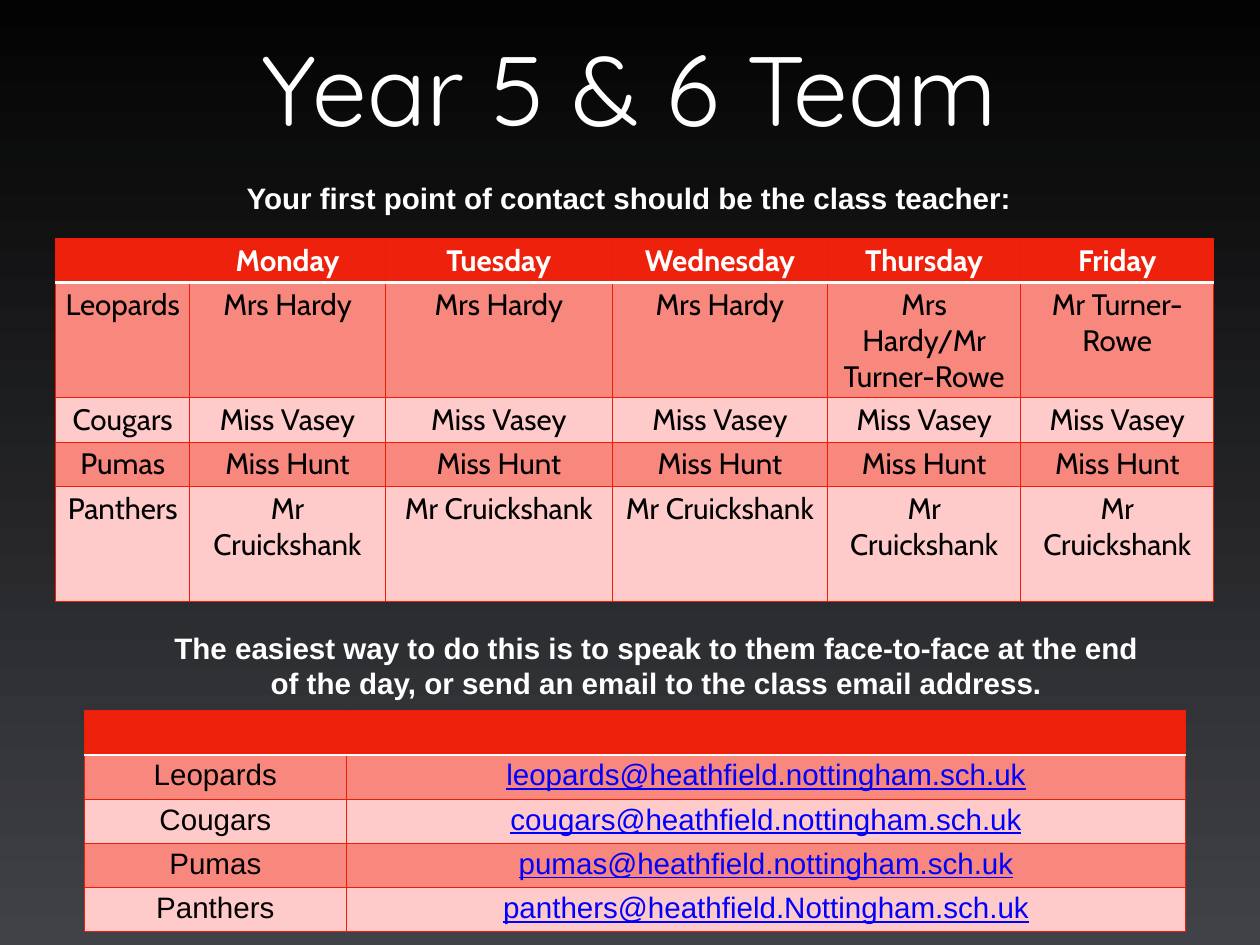
from lxml import etree
from pptx import Presentation
from pptx.dml.color import RGBColor
from pptx.enum.text import MSO_ANCHOR, PP_ALIGN
from pptx.oxml.ns import qn
from pptx.util import Inches, Pt

CENTER = PP_ALIGN.CENTER
MIDDLE, BOTTOM = MSO_ANCHOR.MIDDLE, MSO_ANCHOR.BOTTOM

WHITE = RGBColor(0xFF, 0xFF, 0xFF)
BLACK = RGBColor(0x00, 0x00, 0x00)
LINK_BLUE = RGBColor(0x00, 0x00, 0xFF)
HEADER_RED = RGBColor(0xEE, 0x22, 0x0C)
BORDER_RED = RGBColor(0xEE, 0x1D, 0x06)
BANDS = (RGBColor(0xF8, 0x87, 0x7D), RGBColor(0xFF, 0xCA, 0xCA))
BACKGROUND = (RGBColor(0x03, 0x03, 0x03), RGBColor(0x41, 0x42, 0x47))

# Content
TITLE = "Year 5 & 6 Team"
CONTACT = "Your first point of contact should be the class teacher:"
ADVICE = ("The easiest way to do this is to speak to them face-to-face at the end "
          "of the day, or send an email to the class email address.")
TIMETABLE = [
    ["", "Monday", "Tuesday", "Wednesday", "Thursday", "Friday"],
    ["Leopards"] + ["Mrs Hardy"] * 3 + ["Mrs Hardy/Mr Turner-Rowe", "Mr Turner-Rowe"],
    ["Cougars"] + ["Miss Vasey"] * 5,
    ["Pumas"] + ["Miss Hunt"] * 5,
    ["Panthers"] + ["Mr Cruickshank"] * 5,
]
EMAILS = [
    ["", ""],
    ["Leopards", "leopards@heathfield.nottingham.sch.uk"],
    ["Cougars", "cougars@heathfield.nottingham.sch.uk"],
    ["Pumas", "pumas@heathfield.nottingham.sch.uk"],
    ["Panthers", "panthers@heathfield.Nottingham.sch.uk"],
]

# Layout in inches
SLIDE_SIZE = (14.22, 10.67)
ROW, TALL_ROW = 0.5, 1.3
TIMETABLE_COLUMNS = (1.51, 2.21, 2.56, 2.43, 2.18, 2.18)
TIMETABLE_ROWS = (ROW, TALL_ROW, ROW, ROW, TALL_ROW)
EMAIL_COLUMNS = (2.96, 9.47)
EMAIL_ROWS = (ROW,) * len(EMAILS)


def add_run(paragraph, text, font_name, size, color, bold=False, underline=False):
    paragraph.alignment = CENTER
    run = paragraph.add_run()
    run.text = text
    font = run.font
    font.name, font.size, font.bold, font.underline = font_name, Pt(size), bold, underline
    font.color.rgb = color


def add_text(slide, box, text, font_name, size, bold, anchor):
    frame = slide.shapes.add_textbox(*map(Inches, box)).text_frame
    frame.word_wrap = True
    frame.vertical_anchor = anchor
    frame.margin_left = frame.margin_right = Inches(0.06)
    frame.margin_top = frame.margin_bottom = Inches(0.06)
    add_run(frame.paragraphs[0], text, font_name, size, WHITE, bold)


def set_borders(cell, top, bottom):
    """Each border is a colour and a width in points."""
    red = (BORDER_RED, 0.75)
    properties = cell._tc.get_or_add_tcPr()
    borders = (("a:lnL", red), ("a:lnR", red), ("a:lnT", top or red), ("a:lnB", bottom or red))
    for position, (tag, (color, width)) in enumerate(borders):
        line = etree.Element(qn(tag), w=str(Pt(width)))
        fill = etree.SubElement(line, qn("a:solidFill"))
        etree.SubElement(fill, qn("a:srgbClr"), val=str(color))
        properties.insert(position, line)


def add_grid(slide, left, top, columns, rows, content, font_name, link_column=None):
    box = (left, top, sum(columns), sum(rows))
    table = slide.shapes.add_table(len(rows), len(columns), *map(Inches, box)).table
    table.first_row = table.horz_banding = False
    for column, width in zip(table.columns, columns):
        column.width = Inches(width)
    header_rule = (WHITE, 2)
    for r, texts in enumerate(content):
        table.rows[r].height = Inches(rows[r])
        header = r == 0
        for c, text in enumerate(texts):
            cell = table.cell(r, c)
            cell.fill.solid()
            cell.fill.fore_color.rgb = HEADER_RED if header else BANDS[(r - 1) % 2]
            set_borders(cell, header_rule if r == 1 else None, header_rule if header else None)
            if text:
                link = c == link_column
                color = WHITE if header else LINK_BLUE if link else BLACK
                add_run(cell.text_frame.paragraphs[0], text, font_name, 24, color, header, link)


def main():
    presentation = Presentation()
    presentation.slide_width, presentation.slide_height = map(Inches, SLIDE_SIZE)
    slide = presentation.slides.add_slide(presentation.slide_layouts[6])

    # Background, dark at the top
    fill = slide.background.fill
    fill.gradient()
    fill.gradient_angle = 270
    for stop, color, position in zip(fill.gradient_stops, BACKGROUND, (0, 1)):
        stop.color.rgb = color
        stop.position = position

    # Title and class teachers
    add_text(slide, (1.39, 0.13, 11.44, 1.58), TITLE, "Quicksand", 80, False, BOTTOM)
    add_text(slide, (2.14, 1.97, 9.91, 0.52), CONTACT, "Arial", 24, True, MIDDLE)
    add_grid(slide, 0.63, 2.69, TIMETABLE_COLUMNS, TIMETABLE_ROWS, TIMETABLE, "Cabin")

    # Class email addresses
    add_text(slide, (1.77, 7.05, 11.27, 0.92), ADVICE, "Arial", 24, True, MIDDLE)
    add_grid(slide, 0.95, 8.02, EMAIL_COLUMNS, EMAIL_ROWS, EMAILS, "Arial", link_column=1)

    presentation.save("out.pptx")


if __name__ == "__main__":
    main()
